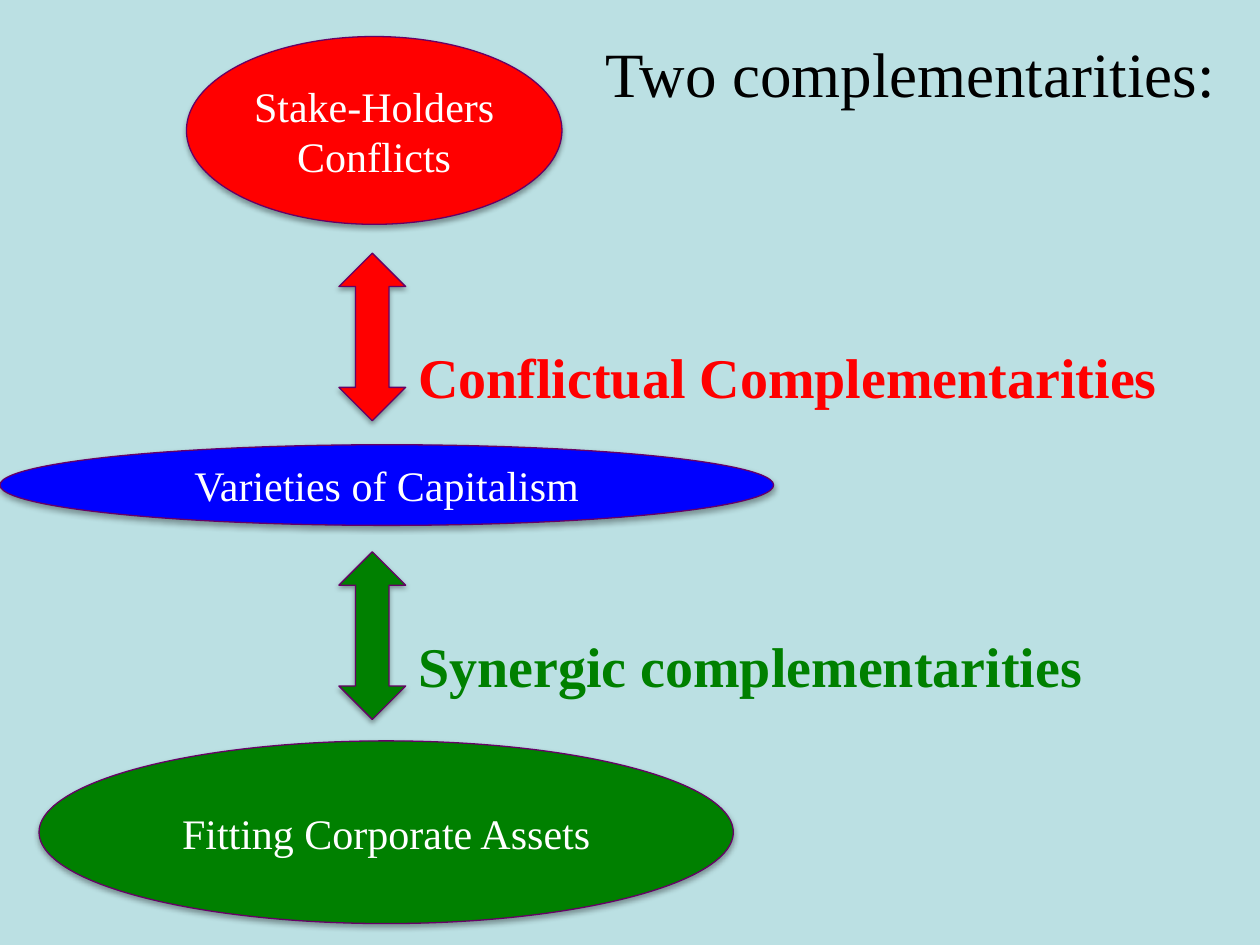
from lxml.etree import SubElement
from pptx import Presentation
from pptx.dml.color import RGBColor
from pptx.enum.shapes import MSO_SHAPE
from pptx.enum.text import MSO_ANCHOR, PP_ALIGN
from pptx.oxml.ns import qn
from pptx.util import Inches, Pt

WIDE, HIGH = Inches(10), Inches(7.5)
COLS, ROWS = 100, 75
FONT = "Times New Roman"
HUES = {
    "back": "BBE0E3",
    "title": "000000",
    "label": "FFFFFF",
    "edge": "660066",
    "shade": "000000",
    "clash": "FF0000",
    "core": "0000FF",
    "match": "008000",
}


def hue(name):
    return RGBColor.from_string(HUES[name])


def place(box):
    left, top, width, height = box
    col, row = WIDE / COLS, HIGH / ROWS
    return [round(n) for n in (left * col, top * row, width * col, height * row)]


def write(shape, text, size, color, bold=False, align=PP_ALIGN.CENTER,
          anchor=MSO_ANCHOR.MIDDLE):
    frame = shape.text_frame
    frame.word_wrap = True
    frame.vertical_anchor = anchor
    frame.text = text
    line = frame.paragraphs[0]
    line.alignment = align
    font = line.runs[0].font
    font.name, font.size, font.bold = FONT, Pt(size), bold
    font.color.rgb = hue(color)


def shade(shape):
    shape.shadow.inherit = False
    effects = shape.element.spPr.find(qn("a:effectLst"))
    drop = SubElement(effects, qn("a:outerShdw"), blurRad=str(Pt(3.1)),
                      dist=str(Pt(1.8)), dir="5400000", rotWithShape="0")
    tint = SubElement(drop, qn("a:srgbClr"), val=HUES["shade"])
    SubElement(tint, qn("a:alpha"), val="35000")


def solid(slide, kind, box, color):
    shape = slide.shapes.add_shape(kind, *place(box))
    shape.fill.solid()
    shape.fill.fore_color.rgb = hue(color)
    shape.line.color.rgb = hue("edge")
    shape.line.width = Pt(0.75)
    shade(shape)
    return shape


def title(slide, box, text):
    write(slide.shapes.add_textbox(*place(box)), text, 36, "title")


def oval(slide, box, text, color):
    write(solid(slide, MSO_SHAPE.OVAL, box, color), text, 24, "label")


def link(slide, box, text, color, drop):
    left, top, width, height = box
    arrow = 5.3
    solid(slide, MSO_SHAPE.UP_DOWN_ARROW, (left, top, arrow, height), color)
    words = (left + arrow, top + drop, width - arrow, height - drop)
    write(slide.shapes.add_textbox(*place(words)), text, 32, color, True,
          PP_ALIGN.LEFT, MSO_ANCHOR.TOP)


def main():
    deck = Presentation()
    deck.slide_width, deck.slide_height = WIDE, HIGH
    slide = deck.slides.add_slide(deck.slide_layouts[6])
    slide.background.fill.solid()
    slide.background.fill.fore_color.rgb = hue("back")

    title(slide, (44.5, 0, 55.5, 11.5), "Two complementarities:")
    oval(slide, (14.8, 2.9, 29.8, 14.9), "Stake-Holders Conflicts", "clash")
    link(slide, (26.9, 20.1, 72.2, 13.3), "Conflictual Complementarities",
         "clash", 6.6)
    oval(slide, (0, 35.3, 61.4, 6.4), "Varieties of Capitalism", "core")
    link(slide, (26.9, 43.8, 72.2, 13.3), "Synergic complementarities",
         "match", 5.8)
    oval(slide, (3.1, 58.8, 55.1, 14.5), "Fitting Corporate Assets", "match")
    deck.save("out.pptx")


if __name__ == "__main__":
    main()
